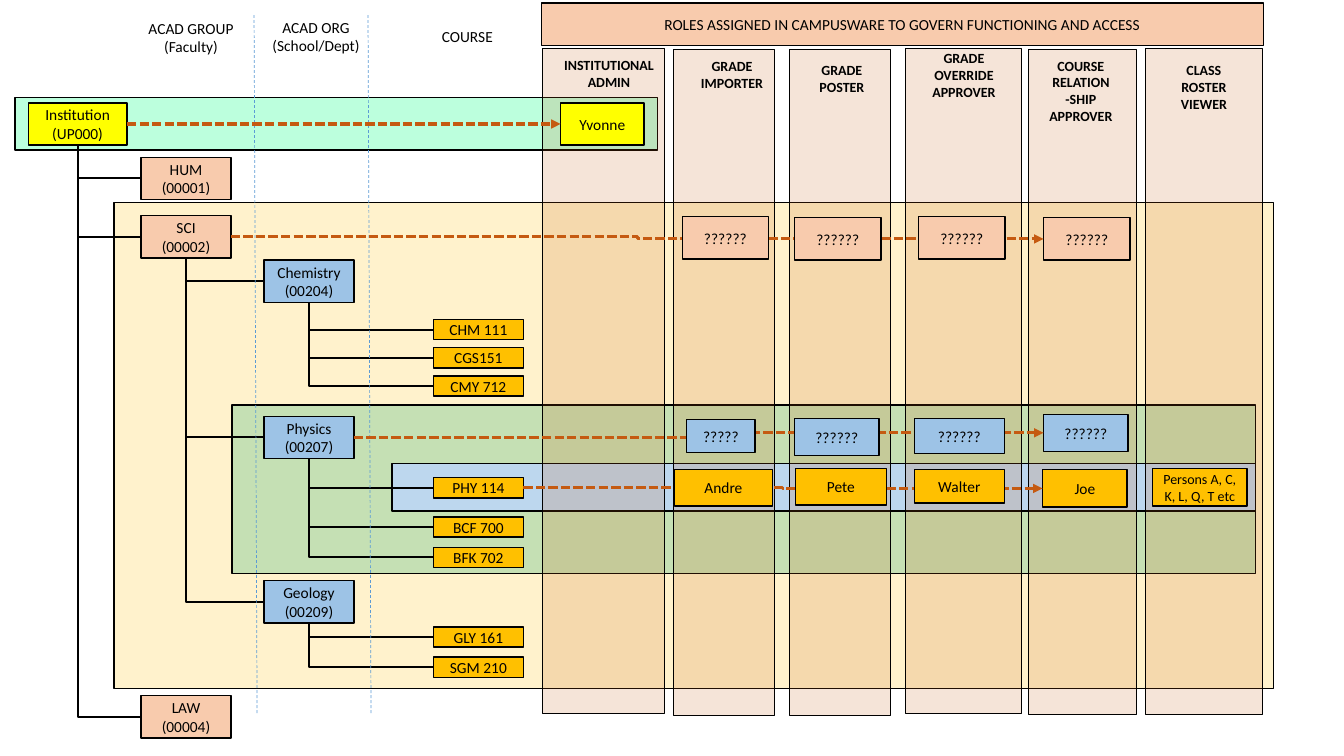
from dataclasses import dataclass

from lxml.etree import SubElement
from pptx import Presentation
from pptx.dml.color import RGBColor
from pptx.enum.dml import MSO_LINE
from pptx.enum.shapes import MSO_CONNECTOR, MSO_SHAPE
from pptx.enum.text import MSO_ANCHOR, MSO_AUTO_SIZE, PP_ALIGN
from pptx.oxml.ns import qn
from pptx.util import Inches, Pt

BOTTOM, LEFT, RIGHT = 2, 1, 3


@dataclass(frozen=True)
class Theme:
    font: str = "Calibri"
    text_size: int = 11
    small_size: int = 10
    black: str = "000000"
    institution: str = "FFFF00"
    faculty: str = "F8CBAD"
    department: str = "9DC3E6"
    course: str = "FFC000"
    institution_band: str = "99FFCC"
    faculty_band: str = "FFF2CC"
    department_band: str = "C5E0B4"
    course_band: str = "BDD7EE"
    role: str = "C55A11"
    divider: str = "5B9BD5"


class Board:
    """Draws on one slide; lengths are cells of a grid, ten to the inch."""

    def __init__(self, deck, theme):
        self.theme = theme
        self.slide = deck.slides.add_slide(deck.slide_layouts[5])

    def cells(self, *counts):
        return [Inches(count / 10) for count in counts]

    def add_lines(self, shape, lines, size, bold=False):
        frame = shape.text_frame
        frame.word_wrap = True
        frame.auto_size = MSO_AUTO_SIZE.NONE
        frame.vertical_anchor = MSO_ANCHOR.MIDDLE
        for index, line in enumerate(lines):
            para = frame.add_paragraph() if index else frame.paragraphs[0]
            para.alignment = PP_ALIGN.CENTER
            span = para.add_run()
            span.text = line
            span.font.name = self.theme.font
            span.font.size = Pt(size)
            span.font.bold = bold
            span.font.color.rgb = RGBColor.from_string(self.theme.black)

    def paint(self, shape, fill, opacity=100):
        shape.fill.solid()
        shape.fill.fore_color.rgb = RGBColor.from_string(fill)
        if opacity < 100:
            color = shape.element.spPr.find(qn("a:solidFill"))[0]
            SubElement(color, qn("a:alpha")).set("val", str(opacity * 1000))
        shape.line.color.rgb = RGBColor.from_string(self.theme.black)
        shape.line.width = Pt(1)

    def title(self, text, *place):
        title = self.slide.shapes.title
        title.left, title.top, title.width, title.height = self.cells(*place)
        self.paint(title, self.theme.faculty)
        self.add_lines(title, [text], self.theme.text_size)

    def box(self, place, fill, text="", size=None, opacity=100):
        box = self.slide.shapes.add_shape(MSO_SHAPE.RECTANGLE, *self.cells(*place))
        box.shadow.inherit = False
        self.paint(box, fill, opacity)
        if text:
            self.add_lines(box, [text], size or self.theme.text_size)
        return box

    def label(self, place, lines, size, bold=False):
        label = self.slide.shapes.add_textbox(*self.cells(*place))
        self.add_lines(label, lines, size, bold)

    def connector(self, kind, ends, color, width, dash=None):
        line = self.slide.shapes.add_connector(kind, *ends)
        line.line.color.rgb = RGBColor.from_string(color)
        line.line.width = Pt(width)
        if dash:
            line.line.dash_style = dash
        SubElement(line.element.spPr, qn("a:effectLst"))
        return line

    def divider(self, *ends):
        self.connector(MSO_CONNECTOR.STRAIGHT, self.cells(*ends),
                       self.theme.divider, 0.5, MSO_LINE.DASH)

    def branch(self, parent, child):
        """Run down from the parent's bottom, then right to the child's side."""
        start_x, start_y = parent.left + parent.width // 2, parent.top + parent.height
        end_x, end_y = child.left, child.top + child.height // 2
        branch = self.connector(MSO_CONNECTOR.ELBOW, (start_x, start_y, end_x, end_y),
                                self.theme.black, 1.5)
        branch.begin_connect(parent, BOTTOM)
        branch.end_connect(child, LEFT)
        across, down = end_x - start_x, end_y - start_y
        # A quarter turn swaps the sides of the frame around its centre.
        branch.left = (start_x + end_x - down) // 2
        branch.top = (start_y + end_y - across) // 2
        branch.width, branch.height = down, across
        frame = branch.element.spPr.find(qn("a:xfrm"))
        frame.set("rot", "16200000")
        frame.set("flipH", "1")
        branch.element.spPr.find(qn("a:prstGeom")).set("prst", "bentConnector2")

    def role_arrow(self, holder, last_role):
        arrow = self.connector(MSO_CONNECTOR.ELBOW, (0, 0, 0, 0),
                               self.theme.role, 2.25, MSO_LINE.SQUARE_DOT)
        arrow.begin_connect(holder, RIGHT)
        arrow.end_connect(last_role, LEFT)
        outline = arrow.element.spPr.find(qn("a:ln"))
        SubElement(outline, qn("a:tailEnd")).set("type", "triangle")


FACULTIES = [("HUM (00001)", 15.6), ("SCI (00002)", 21.4), ("LAW (00004)", 69)]
DEPARTMENTS = [
    ("Chemistry (00204)", 25.8, [("CHM 111", 31.7), ("CGS151", 34.5), ("CMY 712", 37.3)]),
    ("Physics (00207)", 41.3, [("PHY 114", 47.4), ("BCF 700", 51.3), ("BFK 702", 54.3)]),
    ("Geology (00209)", 57.6, [("GLY 161", 62.2), ("SGM 210", 65.2)]),
]
LEVELS = [
    (["ACAD GROUP", "(Faculty)"], 13.4, 1.6),
    (["ACAD ORG", "(School/Dept)"], 25.8, 1.5),
    (["COURSE"], 40.8, 1.5),
]
# Each role: heading, panel place, heading place
ROLES = [
    ("INSTITUTIONAL ADMIN", (53.8, 4.8, 12.1, 66), (54.1, 5.2, 12.6, 4.2)),
    ("GRADE IMPORTER", (66.8, 4.9, 10, 66.1), (67.7, 5.3, 9.8, 4.2)),
    ("GRADE POSTER", (78.3, 4.9, 10, 66.1), (78.6, 5.7, 9.8, 4.2)),
    ("GRADE OVERRIDE APPROVER", (89.8, 4.8, 11.5, 66), (90.7, 5.3, 9.8, 4.2)),
    ("COURSE RELATION -SHIP APPROVER", (102, 4.9, 10.7, 66), (102, 6.4, 10.4, 5.2)),
    ("CLASS ROSTER VIEWER", (113.6, 4.8, 11.6, 66.1), (114.3, 6, 10.2, 5.2)),
]


def main():
    deck = Presentation()
    deck.slide_width, deck.slide_height = Inches(13.33), Inches(7.5)
    theme = Theme()
    board = Board(deck, theme)
    board.title("ROLES ASSIGNED IN CAMPUSWARE TO GOVERN FUNCTIONING AND ACCESS",
                53.7, 0.3, 71.6, 4.2)

    board.box((1.5, 9.7, 63.7, 5.2), theme.institution_band, opacity=65)
    board.box((11.3, 20.1, 115, 48.2), theme.faculty_band)
    board.box((23, 40.2, 101.5, 16.7), theme.department_band)
    board.box((38.9, 46, 85.6, 4.7), theme.course_band)

    holders = {}
    institution = board.box((2.8, 10.2, 9.8, 4.2), theme.institution, "Institution (UP000)")
    for name, top in FACULTIES:
        holders[name] = board.box((14, top, 8.9, 4.2), theme.faculty, name)
        board.branch(institution, holders[name])
    science = holders["SCI (00002)"]
    for name, top, courses in DEPARTMENTS:
        holders[name] = board.box((26.2, top, 8.9, 4.2), theme.department, name)
        board.branch(science, holders[name])
        for course, course_top in courses:
            holders[course] = board.box((43, course_top, 8.9, 2), theme.course, course)
            board.branch(holders[name], holders[course])

    for lines, left, top in LEVELS:
        board.label((left, top, 11.1, 4.2), lines, theme.text_size)
    for left in (25.2, 36.5):
        board.divider(left, 1.5, left + 0.3, 70.9)
    for heading, panel, place in ROLES:
        board.box(panel, theme.role, opacity=16)
        board.label(place, [heading], theme.small_size, bold=True)

    # Each row: holder, fill, role boxes with the arrow's target last
    role_rows = [
        (institution, theme.institution, [("Yvonne", (55.6, 10.2, 8.3, 4.2))]),
        (science, theme.faculty, [
            ("??????", (67.7, 21.5, 8.5, 4.2)), ("??????", (78.8, 21.6, 8.6, 4.2)),
            ("??????", (91.1, 21.5, 8.6, 4.2)), ("??????", (103.5, 21.6, 8.6, 4.2))]),
        (holders["Physics (00207)"], theme.department, [
            ("?????", (68.1, 41.6, 6.8, 3.3)), ("??????", (78.8, 41.5, 8.4, 3.7)),
            ("??????", (90.7, 41.5, 8.9, 3.5)), ("??????", (103.5, 41.1, 8.4, 3.7))]),
        (holders["PHY 114"], theme.course, [
            ("Andre", (66.9, 46.6, 9.7, 3.6)), ("Pete", (78.9, 46.5, 9, 3.6)),
            ("Walter", (90.7, 46.6, 8.9, 3.3)), ("Joe", (103.4, 46.6, 8.4, 3.7))]),
    ]
    for holder, fill, people in role_rows:
        *passed, (last_name, last_place) = people
        board.role_arrow(holder, board.box(last_place, fill, last_name))
        for name, place in passed:
            board.box(place, fill, name)
    board.box((114.3, 46.5, 9.4, 3.7), theme.course,
              "Persons A, C, K, L, Q, T etc", theme.small_size)

    deck.save("out.pptx")


if __name__ == "__main__":
    main()
